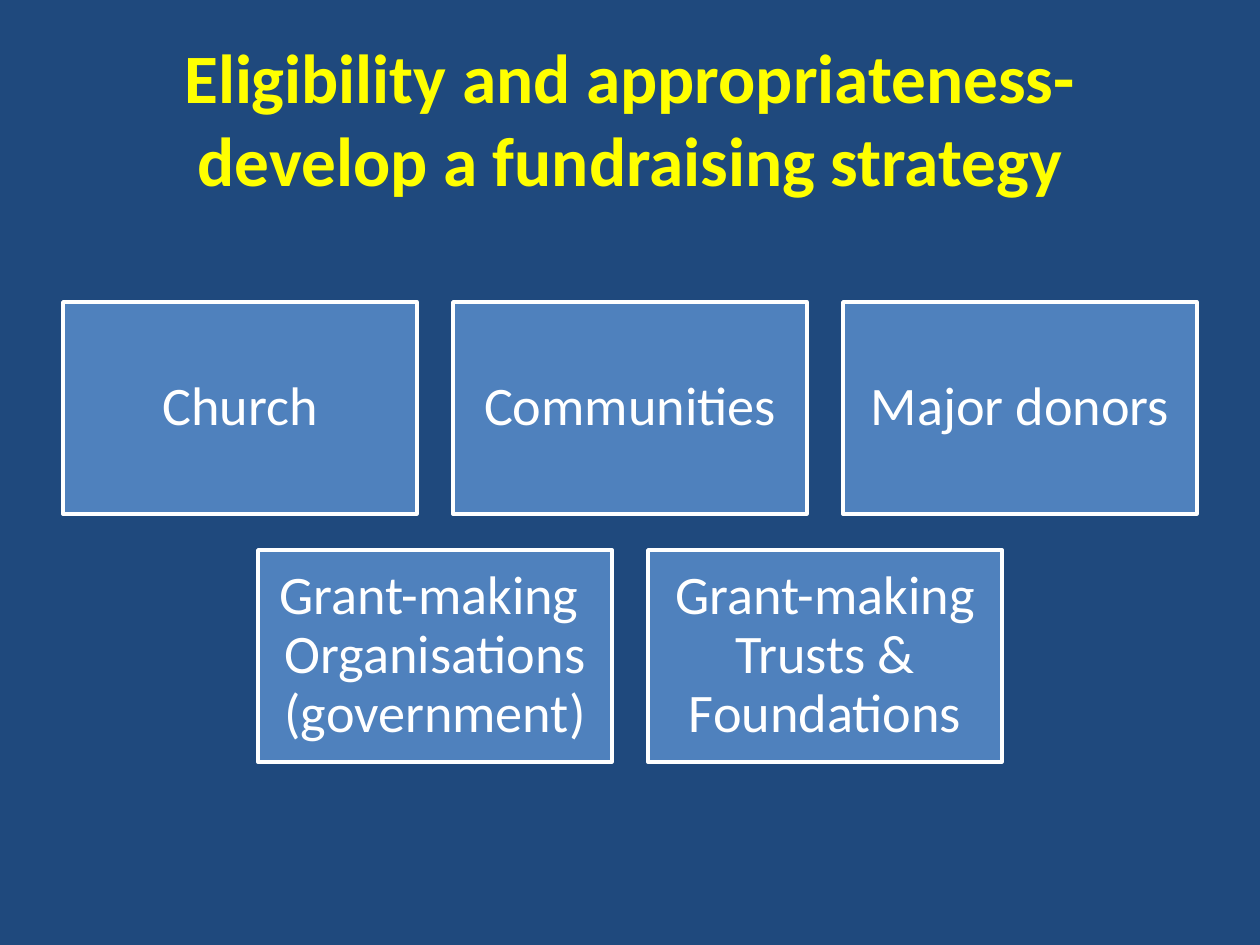
from pptx import Presentation
from pptx.dml.color import RGBColor
from pptx.enum.shapes import MSO_SHAPE
from pptx.enum.text import MSO_ANCHOR, MSO_AUTO_SIZE, PP_ALIGN
from pptx.util import Emu, Pt

PIXEL = 914400 // 126
NAVY, BLUE, WHITE, YELLOW = "1F497D", "4F81BD", "FFFFFF", "FFFF00"
FUNDING_ROWS = [
    ["Church", "Communities", "Major donors"],
    ["Grant-making  Organisations (government)", "Grant-making Trusts & Foundations"],
]


def px(length):
    return Emu(length * PIXEL)


def paint(color_format, color):
    color_format.rgb = RGBColor.from_string(color)


def fill_solid(fill, color):
    fill.solid()
    paint(fill.fore_color, color)


def write_text(shape, text, size, color, bold=False, line_spacing=1.0, inset=None):
    frame = shape.text_frame
    frame.word_wrap = True
    frame.auto_size = MSO_AUTO_SIZE.NONE
    frame.vertical_anchor = MSO_ANCHOR.MIDDLE
    if inset is not None:
        frame.margin_left = frame.margin_right = px(inset)
        frame.margin_top = frame.margin_bottom = px(inset)
    para = frame.paragraphs[0]
    para.alignment = PP_ALIGN.CENTER
    para.line_spacing = line_spacing
    span = para.add_run()
    span.text = text
    span.font.name = "Calibri"
    span.font.size = Pt(size)
    span.font.bold = bold
    paint(span.font.color, color)


def place_title(page, left, top, width, height):
    title = page.shapes.title
    title.left, title.top = px(left), px(top)
    title.width, title.height = px(width), px(height)
    write_text(title, "Eligibility and appropriateness- develop a fundraising strategy",
               size=39.6, color=YELLOW, bold=True)


def place_funding_grid(page, left, top, width, rows, columns=3, gap=36):
    box_width = (width - (columns - 1) * gap) // columns
    box_height = box_width * 3 // 5
    for row_index, labels in enumerate(rows):
        row_width = len(labels) * (box_width + gap) - gap
        row_left = left + (width - row_width) // 2
        for column, label in enumerate(labels):
            box = page.shapes.add_shape(
                MSO_SHAPE.RECTANGLE,
                px(row_left + column * (box_width + gap)),
                px(top + row_index * (box_height + gap)),
                px(box_width), px(box_height))
            box.shadow.inherit = False
            fill_solid(box.fill, BLUE)
            paint(box.line.color, WHITE)
            box.line.width = Pt(2)
            write_text(box, label, size=31, color=WHITE, line_spacing=0.9, inset=16)


def main():
    deck = Presentation()
    deck.slide_width, deck.slide_height = px(1260), px(945)
    page = deck.slides.add_slide(deck.slide_layouts[5])
    fill_solid(page.background.fill, NAVY)
    place_title(page, left=63, top=38, width=1134, height=158)
    place_funding_grid(page, left=63, top=302, width=1134, rows=FUNDING_ROWS)
    deck.save("out.pptx")


if __name__ == "__main__":
    main()
